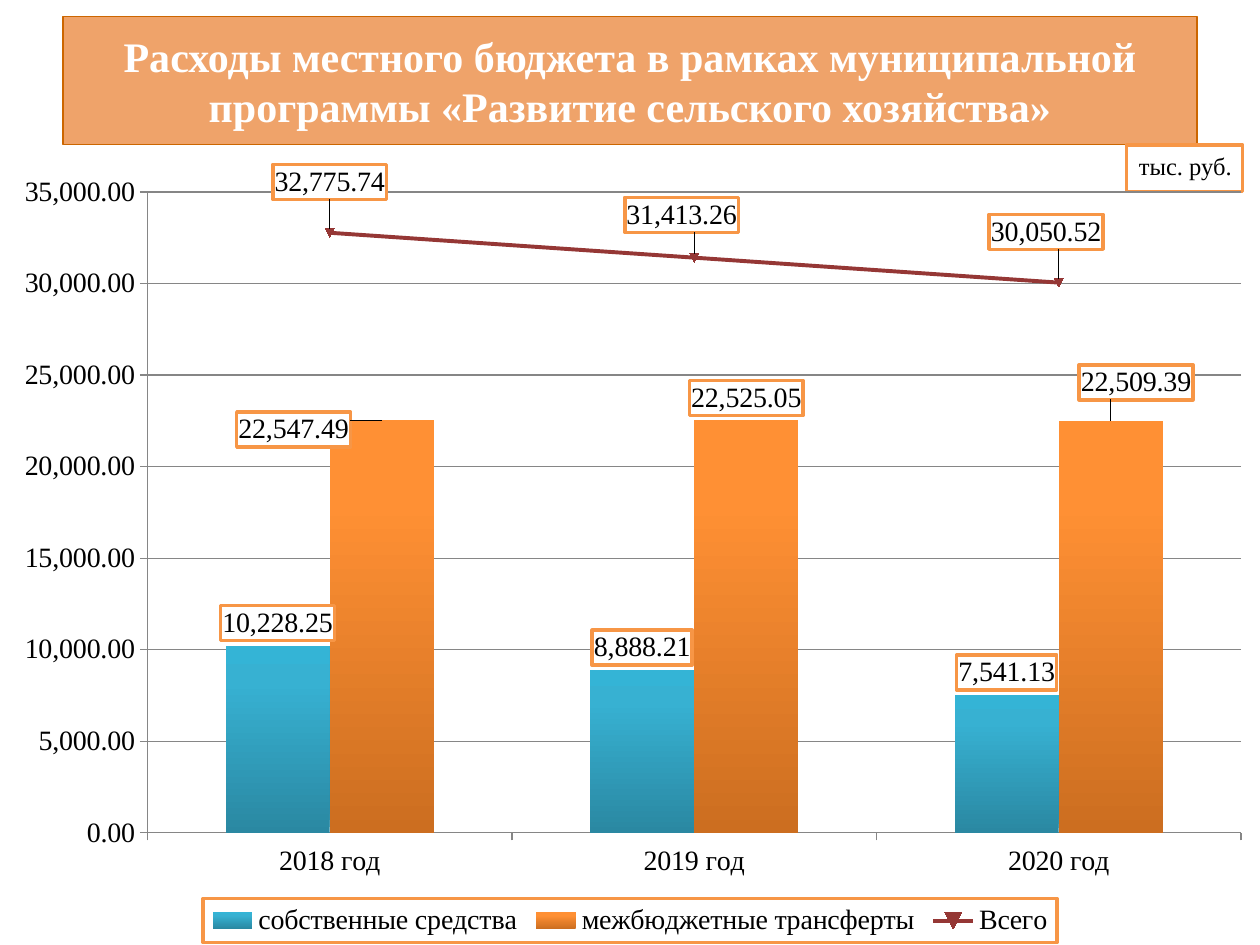
from lxml.etree import SubElement as Sub
from pptx import Presentation as Deck
from pptx.chart.data import CategoryChartData as Data
from pptx.dml.color import RGBColor as Rgb
from pptx.enum.chart import XL_CHART_TYPE as Kind, XL_LEGEND_POSITION as Spot
from pptx.enum.chart import XL_MARKER_STYLE as Mark, XL_TICK_MARK as Tick
from pptx.enum.shapes import MSO_SHAPE as Form
from pptx.enum.text import MSO_ANCHOR as Anchor, PP_ALIGN as Align
from pptx.oxml import parse_xml as read
from pptx.oxml.ns import nsdecls, qn
from pptx.util import Cm, Pt

TITLE = "Расходы местного бюджета в рамках муниципальной программы «Развитие сельского хозяйства»"
UNIT = "тыс. руб."
YEARS = ["2018 год", "2019 год", "2020 год"]
BARS = [
    {"name": "собственные средства", "vals": [10228.25, 8888.21, 7541.13],
     "grad": [(0, "2A88A2"), (80, "37B1D2"), (100, "34B4D6")], "moves": {}},
    {"name": "межбюджетные трансферты", "vals": [22547.49, 22525.05, 22509.39],
     "grad": [(0, "CC6E20"), (80, "FF9034"), (100, "FF9136")],
     "moves": {0: (-0.07, 0.04), 2: (0.02, -0.02)}},
]
TOTAL = {"name": "Всего", "vals": [32775.74, 31413.26, 30050.52],
         "moves": {0: (0, -0.03), 1: (-0.01, -0.02), 2: (-0.01, -0.03)}}
THEME = {"font": "Times New Roman", "head": 24, "unit": 14, "chart": 16,
         "text": "000000", "white": "FFFFFF", "band": "E97C2B", "rim": "CC6600",
         "frame": "F79646", "total": "953735", "grid": "868686"}
FORMAT = "#,##0.00"
PLOT = {"x": 0.117, "y": 0.059, "w": 0.868, "h": 0.801}
KEY = {"x": 0.161, "y": 0.942, "w": 0.678, "h": 0.055}
NS = nsdecls("c", "a")


def tint(name):
    return Rgb.from_string(THEME[name])


def add_box(slide, area, fill, rim, width):
    box = slide.shapes.add_shape(Form.RECTANGLE, *map(Cm, area))
    box.shadow.inherit = False
    box.fill.solid()
    box.fill.fore_color.rgb = tint(fill)
    box.line.color.rgb = tint(rim)
    box.line.width = Pt(width)
    return box


def add_text(box, text, size, tone, align, bold=False):
    para = box.text_frame.paragraphs[0]
    para.alignment = align
    run = para.add_run()
    run.text = text
    font = run.font
    font.name, font.size, font.bold = THEME["font"], Pt(THEME[size]), bold
    font.color.rgb = tint(tone)


def frame():
    return (f'<c:spPr {NS}><a:solidFill><a:srgbClr val="{THEME["white"]}"/></a:solidFill>'
            f'<a:ln w="{Pt(2)}"><a:solidFill><a:srgbClr val="{THEME["frame"]}"/>'
            '</a:solidFill></a:ln></c:spPr>')


def place(rule, inner=False):
    target = '<c:layoutTarget val="inner"/>' if inner else ""
    modes = '<c:xMode val="edge"/><c:yMode val="edge"/>'
    sides = "".join(f'<c:{side} val="{size}"/>' for side, size in rule.items())
    return read(f"<c:layout {NS}><c:manualLayout>{target}{modes}{sides}</c:manualLayout></c:layout>")


def add_tags(ser, spot, moves):
    shows = "".join(f'<c:show{part} val="{int(part == "Val")}"/>' for part in
                    ("LegendKey", "Val", "CatName", "SerName", "Percent", "BubbleSize"))
    body = (f'<c:numFmt formatCode="{FORMAT}" sourceLinked="0"/>{frame()}'
            f'<c:dLblPos val="{spot}"/>{shows}')
    tags = "".join(f'<c:dLbl><c:idx val="{idx}"/><c:layout><c:manualLayout><c:x val="{x}"/>'
                   f'<c:y val="{y}"/></c:manualLayout></c:layout>{body}</c:dLbl>'
                   for idx, (x, y) in moves.items())
    ser.find(qn("c:cat")).addprevious(read(f"<c:dLbls {NS}>{tags}{body}</c:dLbls>"))


def shade(series, stops):
    series.format.fill.solid()
    old = series.format.fill.fore_color
    old.rgb = Rgb.from_string(stops[0][1])
    solid = series._element.find(qn("c:spPr")).find(qn("a:solidFill"))
    parts = "".join(f'<a:gs pos="{pos * 1000}"><a:srgbClr val="{tone}"/></a:gs>'
                    for pos, tone in stops)
    solid.getparent().replace(solid, read(
        f'<a:gradFill {NS} rotWithShape="1"><a:gsLst>{parts}</a:gsLst>'
        '<a:lin ang="16200000" scaled="0"/></a:gradFill>'))


def split_line(chart):
    bar = chart.plots[0]._element
    ser = bar.findall(qn("c:ser"))[-1]
    flag = ser.find(qn("c:invertIfNegative"))
    if flag is not None:
        ser.remove(flag)
    line = read(f'<c:lineChart {NS}><c:grouping val="standard"/><c:varyColors val="0"/></c:lineChart>')
    line.append(ser)
    Sub(line, qn("c:marker")).set("val", "1")
    for axis in bar.findall(qn("c:axId")):
        Sub(line, qn("c:axId")).set("val", axis.get("val"))
    bar.addnext(line)
    return chart.plots[1].series[0]


def style_total(series):
    series.smooth = False
    series.format.line.color.rgb = tint("total")
    series.format.line.width = Pt(2.25)
    mark = series.marker
    mark.style, mark.size = Mark.AUTOMATIC, 5
    mark.format.fill.solid()
    mark.format.fill.fore_color.rgb = tint("total")
    mark.format.line.color.rgb = tint("total")
    add_tags(series._element, "t", TOTAL["moves"])


def style_axes(chart):
    value = chart.value_axis
    value.minimum_scale, value.maximum_scale, value.major_unit = 0, 35000, 5000
    value.has_major_gridlines = True
    value.major_gridlines.format.line.color.rgb = tint("grid")
    value.tick_labels.number_format = FORMAT
    value.tick_labels.number_format_is_linked = False
    for axis in (value, chart.category_axis):
        axis.major_tick_mark = Tick.OUTSIDE
        axis.format.line.color.rgb = tint("grid")


def style_key(chart):
    chart.has_legend = True
    key = chart.legend
    key.position = Spot.BOTTOM
    key.include_in_layout = False
    root = key._element
    old = root.find(qn("c:layout"))
    if old is not None:
        root.remove(old)
    root.find(qn("c:legendPos")).addnext(place(KEY))
    root.find(qn("c:overlay")).addnext(read(frame()))


def add_graph(slide):
    data = Data(number_format=FORMAT)
    data.categories = YEARS
    for row in BARS + [TOTAL]:
        data.add_series(row["name"], row["vals"])
    area = map(Cm, (0, 2.92, 25.4, 16.13))
    chart = slide.shapes.add_chart(Kind.COLUMN_CLUSTERED, *area, data).chart
    chart.has_title = False
    font = chart.font
    font.name, font.size = THEME["font"], Pt(THEME["chart"])
    font.color.rgb = tint("text")
    chart._chartSpace.find(qn("c:txPr")).addprevious(
        read(f"<c:spPr {NS}><a:noFill/><a:ln><a:noFill/></a:ln></c:spPr>"))
    plot = chart.plots[0]
    plot.gap_width, plot.overlap, plot.vary_by_categories = 150, 0, False
    total = split_line(chart)
    for series, row in zip(chart.plots[0].series, BARS):
        shade(series, row["grad"])
        add_tags(series._element, "outEnd", row["moves"])
    style_total(total)
    style_axes(chart)
    style_key(chart)
    root = plot._element.getparent()
    old = root.find(qn("c:layout"))
    if old is not None:
        root.remove(old)
    root.insert(0, place(PLOT, inner=True))


def main():
    deck = Deck()
    deck.slide_width, deck.slide_height = Cm(25.4), Cm(19.05)
    slide = deck.slides.add_slide(deck.slide_layouts[6])
    head = add_box(slide, (1.27, 0.33, 22.86, 2.59), "band", "rim", 0.75)
    tone = head.fill._xPr.find(qn("a:solidFill"))[0]
    Sub(tone, qn("a:alpha")).set("val", "70000")
    head.text_frame.word_wrap = True
    head.text_frame.vertical_anchor = Anchor.MIDDLE
    add_text(head, TITLE, "head", "white", Align.CENTER, True)
    unit = add_box(slide, (22.71, 2.92, 2.34, 0.94), "white", "frame", 2)
    unit.text_frame.word_wrap = False
    unit.text_frame.vertical_anchor = Anchor.TOP
    add_text(unit, UNIT, "unit", "text", Align.LEFT)
    add_graph(slide)
    deck.save("out.pptx")


if __name__ == "__main__":
    main()
